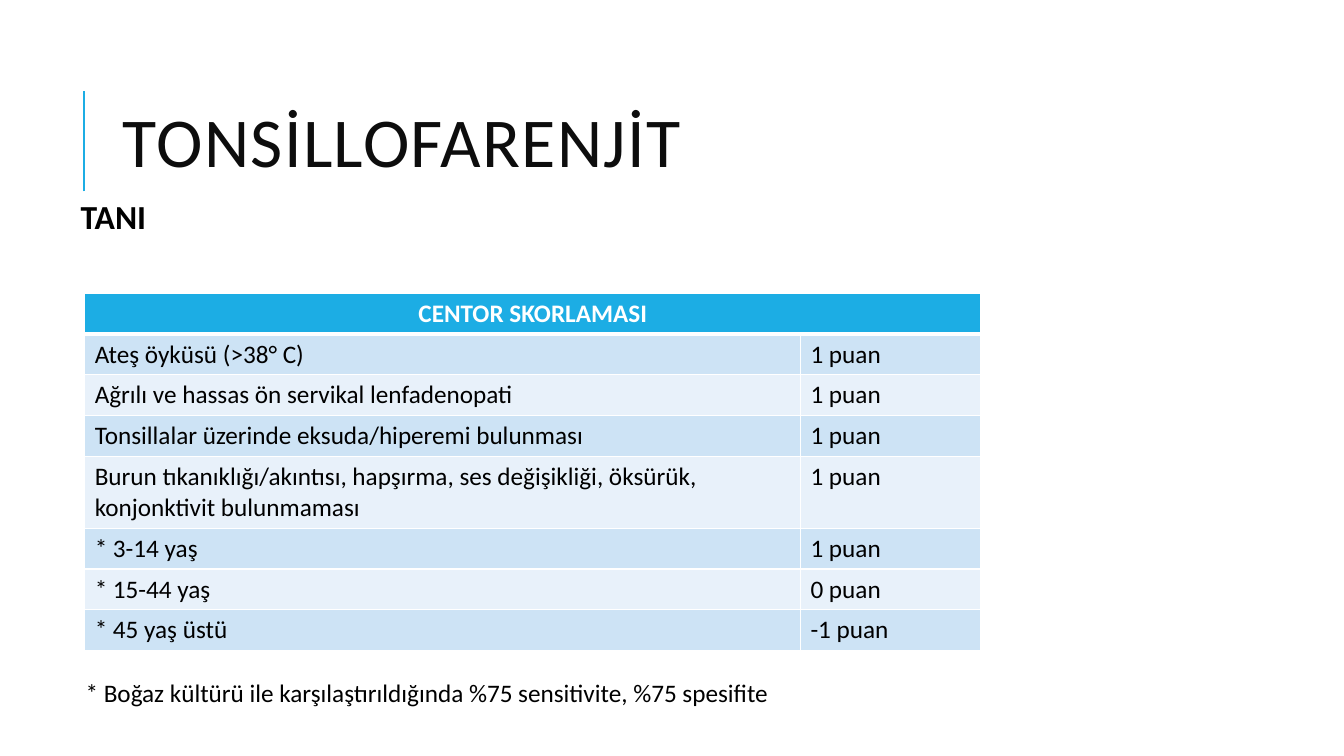
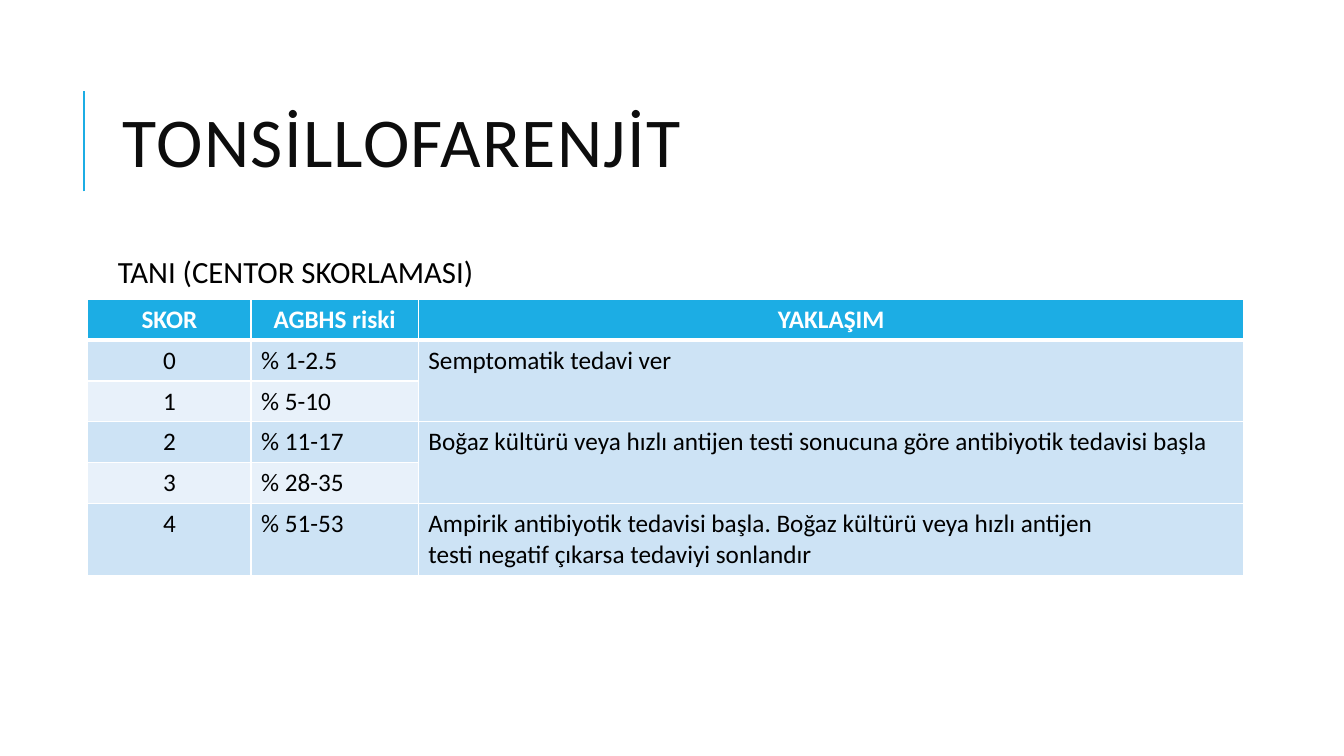
"""Build two slides on diagnosing tonsillopharyngitis with the Centor score."""
from lxml.etree import SubElement
from pptx import Presentation
from pptx.dml.color import RGBColor
from pptx.enum.shapes import MSO_CONNECTOR
from pptx.enum.text import MSO_ANCHOR, PP_ALIGN
from pptx.oxml.ns import qn
from pptx.util import Inches, Pt

WIDTH, HEIGHT = Inches(13.33), Inches(7.5)
FONT = "Calibri"
ACCENT = RGBColor(0x1C, 0xAD, 0xE4)
TITLE_INK = RGBColor(0x0D, 0x0D, 0x0D)
BLACK = RGBColor(0x00, 0x00, 0x00)
WHITE = RGBColor(0xFF, 0xFF, 0xFF)
BANDS = (RGBColor(0xE8, 0xF1, 0xFA), RGBColor(0xCD, 0xE3, 0xF5))
ROW, TALL_ROW = 5.4, 9.5

CRITERIA = [
    ("CENTOR SKORLAMASI", ""),
    ("Ateş öyküsü (>38° C)", "1 puan"),
    ("Ağrılı ve hassas ön servikal lenfadenopati", "1 puan"),
    ("Tonsillalar üzerinde eksuda/hiperemi bulunması", "1 puan"),
    ("Burun tıkanıklığı/akıntısı, hapşırma, ses değişikliği, öksürük, "
     "konjonktivit bulunmaması", "1 puan"),
    ("* 3-14 yaş", "1 puan"),
    ("* 15-44 yaş", "0 puan"),
    ("* 45 yaş üstü", "-1 puan"),
]
APPROACH = [
    ("SKOR", "AGBHS riski", "YAKLAŞIM"),
    ("0", "% 1-2.5", "Semptomatik tedavi ver"),
    ("1", "% 5-10", ""),
    ("2", "% 11-17", "Boğaz kültürü veya hızlı antijen testi sonucuna göre "
     "antibiyotik tedavisi başla"),
    ("3", "% 28-35", ""),
    ("4", "% 51-53", "Ampirik antibiyotik tedavisi başla. Boğaz kültürü veya hızlı antijen\n"
     "testi negatif çıkarsa tedaviyi sonlandır"),
]


def across(percent):
    """Turn a share of the slide width into a length."""
    return round(WIDTH * percent / 100)


def down(percent):
    """Turn a share of the slide height into a length."""
    return round(HEIGHT * percent / 100)


def style(frame, size, color, bold=False, align=PP_ALIGN.LEFT, leading=1.0):
    """Format every paragraph and run of a text frame."""
    for paragraph in frame.paragraphs:
        paragraph.alignment = align
        paragraph.line_spacing = leading
        for run in paragraph.runs:
            run.font.name = FONT
            run.font.size = Pt(size)
            run.font.bold = bold
            run.font.color.rgb = color


def add_text(slide, text, left, top, width, height, size,
             color=BLACK, bold=False, leading=1.0, inset=None):
    """Add a wrapped text box placed by shares of the slide."""
    box = slide.shapes.add_textbox(across(left), down(top), across(width), down(height))
    frame = box.text_frame
    frame.word_wrap = True
    if inset is not None:
        frame.margin_left = frame.margin_right = Inches(inset)
        frame.margin_top = frame.margin_bottom = Inches(inset)
    frame.text = text
    style(frame, size, color, bold, leading=leading)
    return frame


def add_heading(slide, text):
    """Add the accent rule and the letter-spaced title."""
    rule = slide.shapes.add_connector(
        MSO_CONNECTOR.STRAIGHT, across(6.23), down(25.33), across(6.23), down(12))
    rule.line.color.rgb = ACCENT
    rule.line.width = Pt(1.5)
    SubElement(rule._element.spPr, qn("a:effectLst"))
    title = add_text(slide, text, 8.4, 8.53, 79.75, 21.87, 50, TITLE_INK, leading=0.8)
    title.vertical_anchor = MSO_ANCHOR.MIDDLE
    title.paragraphs[0].runs[0].font._element.set("spc", "100")


def add_subheading(slide, text, left, top, width, height, size, bold=False):
    """Add the line of text that introduces a table."""
    add_text(slide, text, left, top, width, height, size, bold=bold, leading=0.9, inset=0.05)


def add_borders(cell, bottom):
    """Draw white borders round a cell, with its own bottom width."""
    properties = cell._tc.get_or_add_tcPr()
    for side, points in (("lnL", 1), ("lnR", 1), ("lnT", 1), ("lnB", bottom)):
        border = SubElement(properties, qn(f"a:{side}"), w=str(Pt(points)))
        paint = SubElement(border, qn("a:solidFill"))
        SubElement(paint, qn("a:srgbClr"), val=str(WHITE))


def add_grid(slide, rows, left, top, columns, tall, merges, centred=()):
    """Add a banded table with a centred header, merged cells and one tall row."""
    heights = [TALL_ROW if index == tall else ROW for index in range(len(rows))]
    grid = slide.shapes.add_table(
        len(rows), len(columns), across(left), down(top),
        across(sum(columns)), down(sum(heights))).table
    for column, width in zip(grid.columns, columns):
        column.width = across(width)
    for r, (row, height, texts) in enumerate(zip(grid.rows, heights, rows)):
        row.height = down(height)
        header = r == 0
        for c, text in enumerate(texts):
            cell = grid.cell(r, c)
            cell.text_frame.text = text
            align = PP_ALIGN.CENTER if header or c in centred else PP_ALIGN.LEFT
            style(cell.text_frame, 18, WHITE if header else BLACK, header, align)
            add_borders(cell, 3 if header else 1)
            cell.fill.solid()
            cell.fill.fore_color.rgb = ACCENT if header else BANDS[r % 2]
    for first, last in merges:
        grid.cell(*first).merge(grid.cell(*last))


def add_criteria_slide(slide):
    """Fill the slide that lists the scoring criteria."""
    add_heading(slide, "TONSİLLOFARENJİT")
    add_subheading(slide, "TANI", 5.63, 25.87, 88.75, 9.73, 24, bold=True)
    add_grid(slide, CRITERIA, 6.3, 38.8, (53.26, 13.43), 4, [((0, 0), (0, 1))])
    add_text(slide, "* Boğaz kültürü ile karşılaştırıldığında %75 sensitivite, %75 spesifite",
             5.63, 88.93, 67.37, 5.33, 18)


def add_approach_slide(slide):
    """Fill the slide that maps scores to treatment."""
    add_heading(slide, "TONSİLLOFARENJİT")
    add_subheading(slide, "TANI (CENTOR SKORLAMASI)", 8.4, 33.33, 79.75, 58.67, 22)
    add_grid(slide, APPROACH, 6.53, 39.6, (12.15, 12.45, 61.44), 5,
             [((1, 2), (2, 2)), ((3, 2), (4, 2))], centred=(0,))


def main():
    """Build and save the presentation."""
    deck = Presentation()
    deck.slide_width, deck.slide_height = WIDTH, HEIGHT
    blank = deck.slide_layouts[6]
    for fill_slide in (add_criteria_slide, add_approach_slide):
        fill_slide(deck.slides.add_slide(blank))
    deck.save("out.pptx")


if __name__ == "__main__":
    main()
